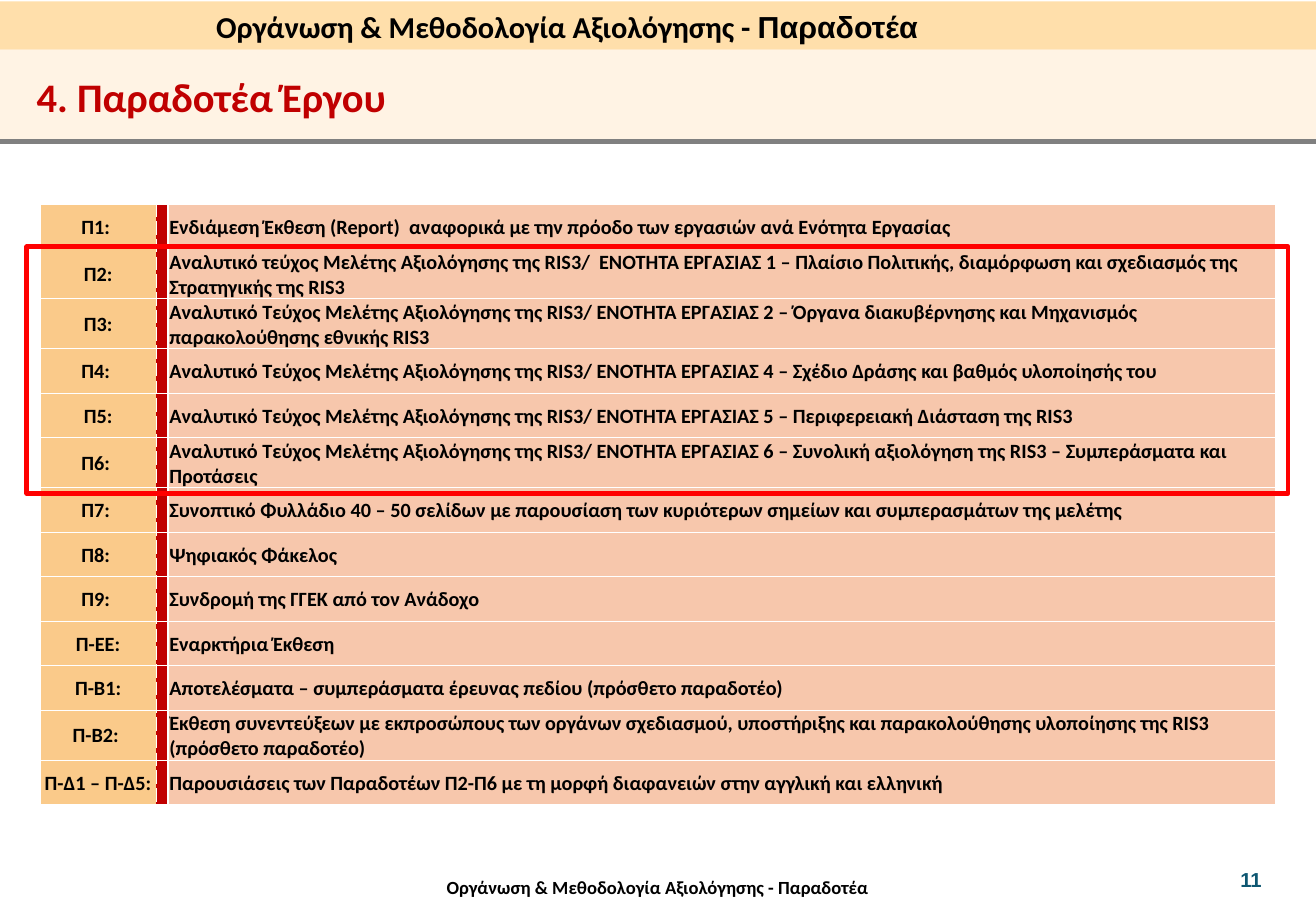
import pptx
import pptx.util
import pptx.dml.color
import pptx.enum.shapes
import pptx.enum.text
import pptx.oxml
import pptx.oxml.ns

Cm, Pt = pptx.util.Cm, pptx.util.Pt
PP_ALIGN = pptx.enum.text.PP_ALIGN
ANCHOR = pptx.enum.text.MSO_ANCHOR
RECT = pptx.enum.shapes.MSO_SHAPE.RECTANGLE
NS = pptx.oxml.ns.nsdecls("a")


def rgb(value):
    return pptx.dml.color.RGBColor.from_string(value)


def style(p, size, color, font="Calibri"):
    for r in p.runs:
        r.font.name = font
        r.font.size = Pt(size)
        r.font.bold = True
        r.font.color.rgb = rgb(color)


deliverables = [
    ("Π1: ", "Ενδιάμεση Έκθεση (Report)  αναφορικά με την πρόοδο των εργασιών ανά Ενότητα Εργασίας"),
    ("Π2:", "Αναλυτικό τεύχος Μελέτης Αξιολόγησης της RIS3/  ΕΝΟΤΗΤΑ ΕΡΓΑΣΙΑΣ 1 – Πλαίσιο Πολιτικής, διαμόρφωση και σχεδιασμός της Στρατηγικής της RIS3"),
    ("Π3:", "Αναλυτικό Τεύχος Μελέτης Αξιολόγησης της RIS3/ ΕΝΟΤΗΤΑ ΕΡΓΑΣΙΑΣ 2 – Όργανα διακυβέρνησης και Μηχανισμός παρακολούθησης εθνικής RIS3"),
    ("Π4: ", "Αναλυτικό Τεύχος Μελέτης Αξιολόγησης της RIS3/ ΕΝΟΤΗΤΑ ΕΡΓΑΣΙΑΣ 4 – Σχέδιο Δράσης και βαθμός υλοποίησής του"),
    ("Π5:", "Αναλυτικό Τεύχος Μελέτης Αξιολόγησης της RIS3/ ΕΝΟΤΗΤΑ ΕΡΓΑΣΙΑΣ 5 – Περιφερειακή Διάσταση της RIS3"),
    ("Π6: ", "Αναλυτικό Τεύχος Μελέτης Αξιολόγησης της RIS3/ ΕΝΟΤΗΤΑ ΕΡΓΑΣΙΑΣ 6 – Συνολική αξιολόγηση της RIS3 – Συμπεράσματα και Προτάσεις"),
    ("Π7: ", "Συνοπτικό Φυλλάδιο 40 – 50 σελίδων με παρουσίαση των κυριότερων σημείων και συμπερασμάτων της μελέτης"),
    ("Π8: ", "Ψηφιακός Φάκελος"),
    ("Π9: ", "Συνδρομή της ΓΓΕΚ από τον Ανάδοχο"),
    ("Π-ΕΕ:", "Εναρκτήρια Έκθεση"),
    ("Π-Β1:", "Αποτελέσματα – συμπεράσματα έρευνας πεδίου (πρόσθετο παραδοτέο)"),
    ("Π-Β2: ", "Έκθεση συνεντεύξεων με εκπροσώπους των οργάνων σχεδιασμού, υποστήριξης και παρακολούθησης υλοποίησης της RIS3 (πρόσθετο παραδοτέο)"),
    ("Π-Δ1 – Π-Δ5:", "Παρουσιάσεις των Παραδοτέων Π2-Π6 με τη μορφή διαφανειών στην αγγλική και ελληνική"),
]

prs = pptx.Presentation()
prs.slide_width = Cm(27.51)
prs.slide_height = Cm(19.05)
s = prs.slides.add_slide(prs.slide_layouts[5])

for top, height, color, opacity in [(0.03, 1.01, "FFDFAB", 100), (1.04, 1.91, "FFE9CA", 50)]:
    sp = s.shapes.add_shape(RECT, 0, Cm(top), prs.slide_width, Cm(height))
    sp.shadow.inherit = False
    sp.fill.solid()
    sp.fill.fore_color.rgb = rgb(color)
    sp.line.fill.background()
    if opacity < 100:
        clr = sp.element.spPr.find(".//" + pptx.oxml.ns.qn("a:srgbClr"))
        clr.append(pptx.oxml.parse_xml(f'<a:alpha {NS} val="{opacity * 1000}"/>'))

rule = s.shapes.add_connector(pptx.enum.shapes.MSO_CONNECTOR.STRAIGHT, 0, Cm(2.95), prs.slide_width, Cm(2.95))
rule.line.color.rgb = rgb("808080")
rule.line.width = Pt(3)
rule.element.spPr.append(pptx.oxml.parse_xml(f"<a:effectLst {NS}/>"))

title = s.shapes.title
s.shapes.element.append(title.element)
title.left, title.top, title.width, title.height = 0, Cm(1.37), prs.slide_width, Cm(1.28)
tf = title.text_frame
tf.text = "4. Παραδοτέα Έργου"
tf.auto_size = pptx.enum.text.MSO_AUTO_SIZE.NONE
tf.vertical_anchor = ANCHOR.MIDDLE
p = tf.paragraphs[0]
p.alignment = PP_ALIGN.LEFT
p._p.get_or_add_pPr().set("marL", str(Cm(0.51)))
style(p, 24, "C00000")

captions = [
    ("Οργάνωση & Μεθοδολογία Αξιολόγησης - ", 4.27, 0.05, 21.72, 1.02, 18, "Calibri", "000000"),
    ("Οργάνωση & Μεθοδολογία Αξιολόγησης - Παραδοτέα", 7.16, 18.31, 13.18, 0.46, 11, "Calibri", "000000"),
    ("11", 25.68, 18.01, 1.32, 0.76, 12, "Arial", "0E5772"),
]
for text, left, top, width, height, size, font, color in captions:
    tf = s.shapes.add_textbox(Cm(left), Cm(top), Cm(width), Cm(height)).text_frame
    tf.word_wrap = True
    tf.text = text
    p = tf.paragraphs[0]
    style(p, size, color, font)
    if size == 18:
        r = p.add_run()
        r.text = "Παραδοτέα"
        style(p, size, color, font)
        r.font.name = "Arial"
    if size == 11:
        tf.margin_left = tf.margin_right = tf.margin_top = tf.margin_bottom = 0
        p.alignment = PP_ALIGN.CENTER

row_height = Cm(0.93)
last = len(deliverables) - 1
table = s.shapes.add_table(
    len(deliverables), 3, Cm(0.84), Cm(4.27), Cm(25.83), row_height * len(deliverables)
).table
table.first_row = table.horz_banding = False
for column, width in zip(table.columns, (2.42, 0.25, 23.16)):
    column.width = Cm(width)

fills = ("FACA8A", "C00000", "F7C7AC")
side_borders = (
    {"R": (0.5, "dash")},
    {"L": (0.5, "dash"), "R": (1.5, "solid")},
    {"L": (1.5, "solid")},
)
for i, (code, description) in enumerate(deliverables):
    table.rows[i].height = row_height
    for j, text in enumerate((code, "", description)):
        cell = table.cell(i, j)
        cell.margin_left = cell.margin_right = cell.margin_top = Cm(0.03)
        cell.margin_bottom = 0
        cell.vertical_anchor = ANCHOR.MIDDLE
        cell.text = text
        p = cell.text_frame.paragraphs[0]
        p.alignment = PP_ALIGN.LEFT if j else PP_ALIGN.CENTER
        style(p, 12, "000000")
        borders = dict(side_borders[j])
        if i > 0:
            borders["T"] = (0.5, "solid")
        if i < last:
            borders["B"] = (0.5, "solid")
        for side in "LRTB":
            if side in borders:
                width, dash = borders[side]
                cell._tc.get_or_add_tcPr().append(pptx.oxml.parse_xml(
                    f'<a:ln{side} {NS} w="{Pt(width)}"><a:solidFill><a:srgbClr val="FFFFFF"/>'
                    f'</a:solidFill><a:prstDash val="{dash}"/></a:ln{side}>'
                ))
        cell.fill.solid()
        cell.fill.fore_color.rgb = rgb(fills[j])

frame = s.shapes.add_shape(RECT, Cm(0.56), Cm(5.16), Cm(26.37), Cm(5.16))
frame.shadow.inherit = False
frame.fill.background()
frame.line.color.rgb = rgb("FF0000")
frame.line.width = Pt(2.75)

prs.save("out.pptx")
